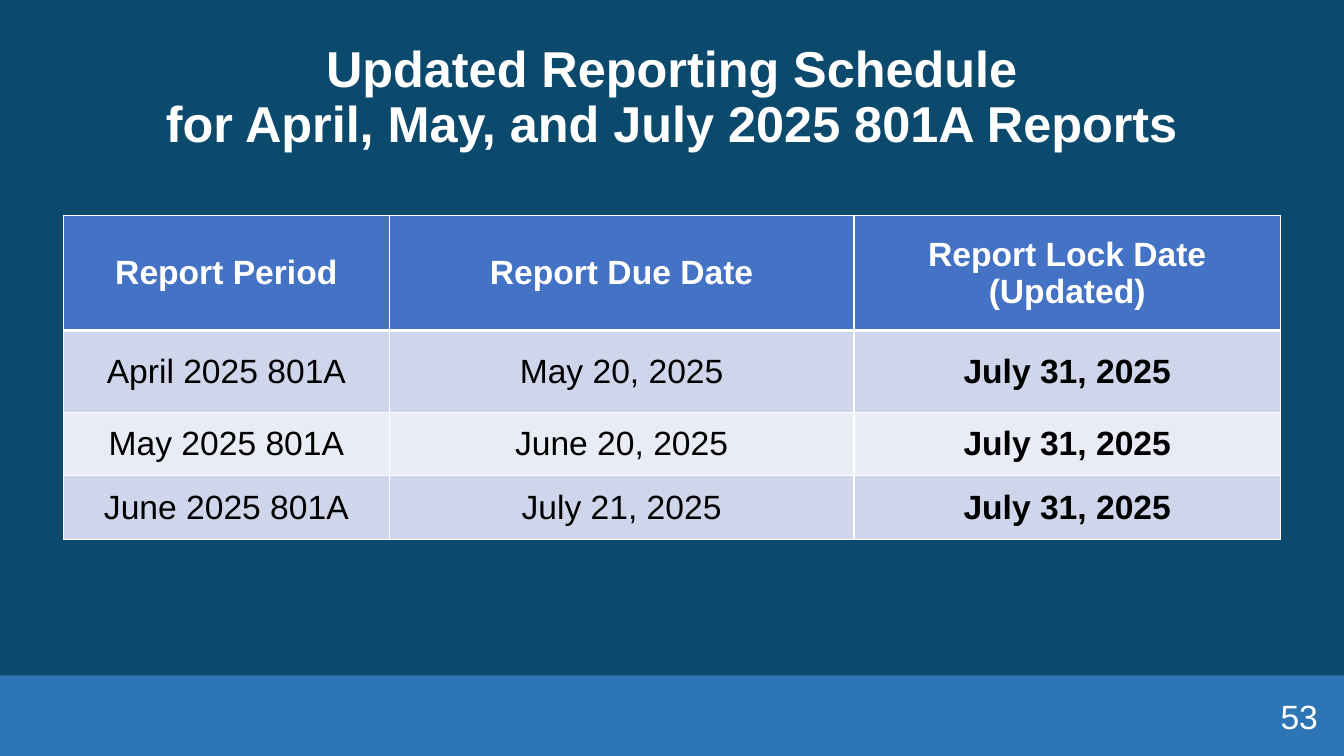
from dataclasses import dataclass

from lxml import etree
from pptx import Presentation
from pptx import util as u
from pptx.dml.color import RGBColor
from pptx.enum import shapes, text
from pptx.oxml import ns

EMU_PER_PX = 9144  # 100 px to the inch
SLIDE_WIDTH, SLIDE_HEIGHT = 1333, 750

NAVY = RGBColor(0x0C, 0x4A, 0x6D)
FOOTER_BLUE = RGBColor(0x2E, 0x75, 0xB6)
HEADER_BLUE = RGBColor(0x44, 0x72, 0xC4)
BAND_DARK = RGBColor(0xCF, 0xD5, 0xEA)
BAND_LIGHT = RGBColor(0xE9, 0xEB, 0xF5)
WHITE = RGBColor(0xFF, 0xFF, 0xFF)
BLACK = RGBColor(0, 0, 0)


@dataclass(frozen=True)
class Box:
    left: int
    top: int
    width: int
    height: int

    def emu(self) -> list[int]:
        return [px(v) for v in (self.left, self.top, self.width, self.height)]


@dataclass(frozen=True)
class TextStyle:
    size: int
    color: RGBColor = WHITE
    bold: bool = False
    align: text.PP_ALIGN = text.PP_ALIGN.CENTER
    line_spacing: float = 1.0


@dataclass(frozen=True)
class Label:
    box: Box
    words: str
    style: TextStyle


@dataclass(frozen=True)
class ReportRow:
    height: int
    cells: tuple[str, str, str]


LABELS = [
    Label(Box(28, 31, 1277, 134),
          "Updated Reporting Schedule\vfor April, May, and July 2025 801A Reports",
          TextStyle(36, bold=True, line_spacing=0.9)),
    Label(Box(1017, 690, 300, 40), "53",
          TextStyle(24, align=text.PP_ALIGN.RIGHT)),
]

TABLE_BOX = Box(63, 214, 1207, 321)
COLUMN_WIDTHS = (323, 461, 423)
REPORT_ROWS = [
    ReportRow(114, ("Report Period", "Report Due Date", "Report Lock Date\n(Updated)")),
    ReportRow(81, ("April 2025 801A", "May 20, 2025", "July 31, 2025")),
    ReportRow(63, ("May 2025 801A", "June 20, 2025", "July 31, 2025")),
    ReportRow(63, ("June 2025 801A", "July 21, 2025", "July 31, 2025")),
]


def px(value: int) -> int:
    return value * EMU_PER_PX


def write_text(frame, words: str, style: TextStyle) -> None:
    frame.text = words
    font_format = {"name": "Arial", "size": u.Pt(style.size), "bold": style.bold}
    for paragraph in frame.paragraphs:
        paragraph.alignment = style.align
        paragraph.line_spacing = style.line_spacing
        for run in paragraph.runs:
            for name, value in font_format.items():
                setattr(run.font, name, value)
            run.font.color.rgb = style.color


def add_label(slide, label: Label) -> None:
    frame = slide.shapes.add_textbox(*label.box.emu()).text_frame
    frame_format = {"word_wrap": True, "vertical_anchor": text.MSO_ANCHOR.MIDDLE}
    for name, value in frame_format.items():
        setattr(frame, name, value)
    write_text(frame, label.words, label.style)


def add_footer_bar(slide, box: Box) -> None:
    bar = slide.shapes.add_shape(shapes.MSO_SHAPE.RECTANGLE, *box.emu())
    bar.shadow.inherit = False
    bar.fill.solid()
    bar.fill.fore_color.rgb = FOOTER_BLUE
    bar.line.fill.background()


def set_borders(cell, widths: dict[str, int]) -> None:
    """Add white cell edges, widths in points; edges precede the fill."""
    properties = cell._tc.get_or_add_tcPr()
    for position, (edge, width) in enumerate(widths.items()):
        line = etree.Element(ns.qn(f"a:{edge}"), w=str(u.Pt(width)))
        fill = etree.SubElement(line, ns.qn("a:solidFill"))
        etree.SubElement(fill, ns.qn("a:srgbClr"), val=str(WHITE))
        properties.insert(position, line)


def add_schedule(slide) -> None:
    table = slide.shapes.add_table(
        len(REPORT_ROWS), len(COLUMN_WIDTHS), *TABLE_BOX.emu()).table
    for column, width in zip(table.columns, COLUMN_WIDTHS):
        column.width = px(width)
    for r, row in enumerate(REPORT_ROWS):
        table.rows[r].height = px(row.height)
        is_header = r == 0
        band = HEADER_BLUE if is_header else BAND_DARK if r % 2 else BAND_LIGHT
        for c, words in enumerate(row.cells):
            cell = table.cell(r, c)
            is_lock_date = c == len(row.cells) - 1
            cell.vertical_anchor = text.MSO_ANCHOR.MIDDLE
            cell.fill.solid()
            cell.fill.fore_color.rgb = band
            write_text(cell.text_frame, words, TextStyle(
                24, WHITE if is_header else BLACK, is_header or is_lock_date))
            # The rule under the header is thicker than the grid
            set_borders(cell, {"lnL": 1, "lnR": 1, "lnT": 3 if r == 1 else 1,
                               "lnB": 3 if is_header else 1})


def main() -> None:
    presentation = Presentation()
    presentation.slide_width = px(SLIDE_WIDTH)
    presentation.slide_height = px(SLIDE_HEIGHT)
    slide = presentation.slides.add_slide(presentation.slide_layouts[6])

    # Background and footer
    slide.background.fill.solid()
    slide.background.fill.fore_color.rgb = NAVY
    add_footer_bar(slide, Box(0, 670, SLIDE_WIDTH, 80))

    # Schedule, title and page number
    add_schedule(slide)
    for label in LABELS:
        add_label(slide, label)

    presentation.save("out.pptx")


if __name__ == "__main__":
    main()
